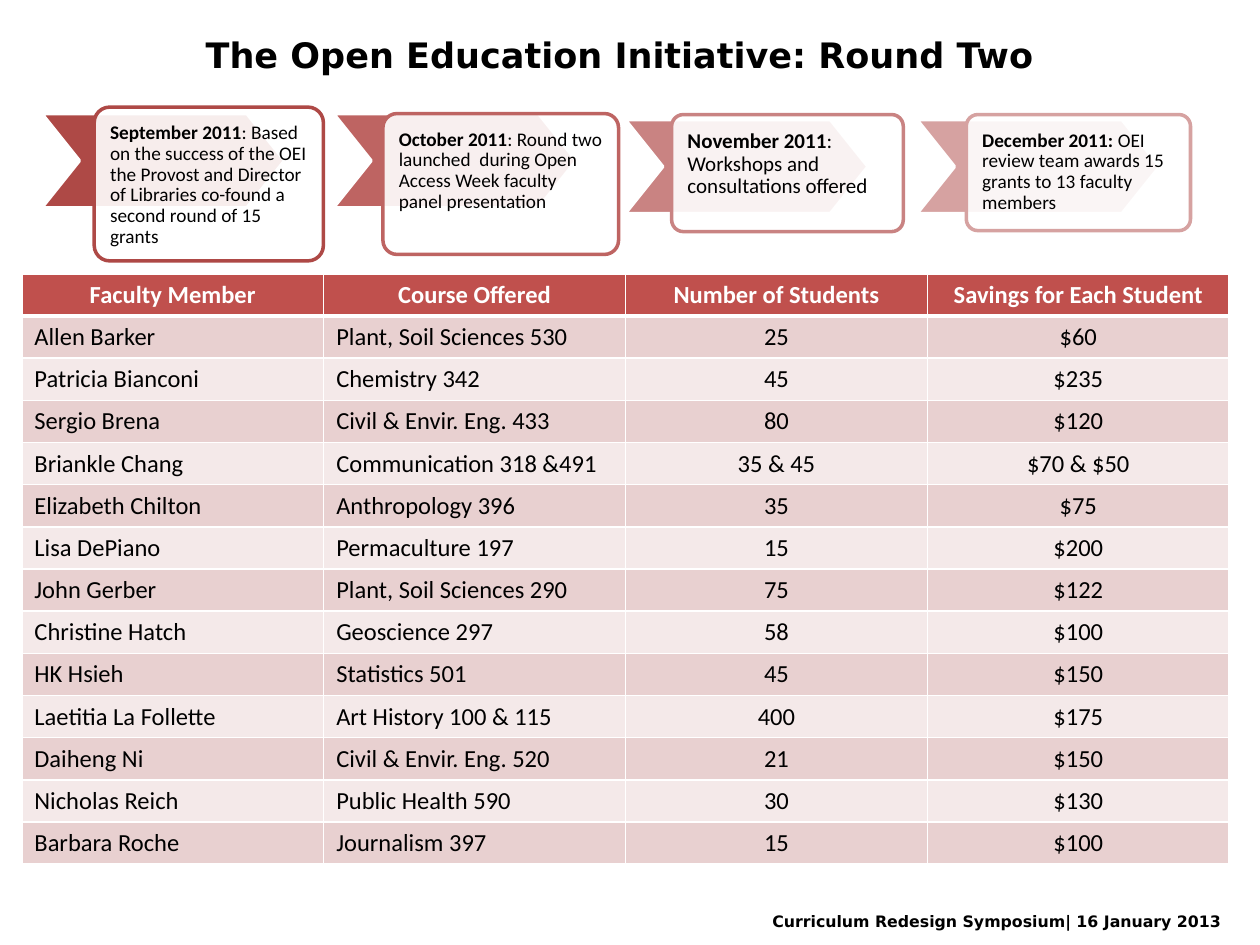
import lxml.etree
import pptx
import pptx.dml.color
import pptx.enum.shapes
import pptx.enum.text
import pptx.oxml
import pptx.oxml.ns
import pptx.util

Cm = pptx.util.Cm
Pt = pptx.util.Pt
RGBColor = pptx.dml.color.RGBColor
MSO_SHAPE = pptx.enum.shapes.MSO_SHAPE
PP_ALIGN = pptx.enum.text.PP_ALIGN
MSO_ANCHOR = pptx.enum.text.MSO_ANCHOR
qn = pptx.oxml.ns.qn

WHITE = RGBColor(0xFF, 0xFF, 0xFF)
BLACK = RGBColor(0, 0, 0)
HEADER_RED = RGBColor(0xC0, 0x50, 0x4D)
BAND_DARK = RGBColor(0xE8, 0xD0, 0xD0)
BAND_LIGHT = RGBColor(0xF4, 0xE9, 0xE9)
SEPTEMBER_RED = RGBColor(0xAE, 0x49, 0x46)
OCTOBER_RED = RGBColor(0xBE, 0x64, 0x62)
NOVEMBER_RED = RGBColor(0xC9, 0x83, 0x82)
DECEMBER_RED = RGBColor(0xD6, 0xA2, 0xA1)


def add_text(shapes, left, top, width, height, runs, font_name, size):
    text_box = shapes.add_textbox(Cm(left), Cm(top), Cm(width), Cm(height))
    text_box.text_frame.word_wrap = True
    paragraph = text_box.text_frame.paragraphs[0]
    paragraph.font.name = font_name
    paragraph.font.size = Pt(size)
    paragraph.font.color.rgb = BLACK
    for text, bold in runs:
        run = paragraph.add_run()
        run.text = text
        run.font.bold = bold
    return text_box.text_frame


def add_block(shapes, preset, bounds, adjustment, fill_color, line_color):
    shape = shapes.add_shape(preset, *[Cm(length) for length in bounds])
    shape.shadow.inherit = False
    shape.adjustments[0] = adjustment
    shape.fill.solid()
    shape.fill.fore_color.rgb = fill_color
    shape.line.color.rgb = line_color
    shape.line.width = Pt(2)
    return shape


presentation = pptx.Presentation()
presentation.slide_width = Cm(25.4)
presentation.slide_height = Cm(19.05)
slide = presentation.slides.add_slide(presentation.slide_layouts[6])

add_text(slide.shapes, 15.32, 18.26, 10.08, 0.64,
         [("Curriculum Redesign Symposium| 16 January 2013", True)], "DejaVu Sans", 9)
title = add_text(slide.shapes, 0.43, -0.84, 24.13, 3.89,
                 [("The Open Education Initiative: Round Two", True)], "DejaVu Sans", 20)
title.vertical_anchor = MSO_ANCHOR.MIDDLE
title.paragraphs[0].alignment = PP_ALIGN.CENTER

milestones = [
    (SEPTEMBER_RED, 2.29, (1.9, 2.16, 4.62, 3.1), 11, "September 2011",
     ": Based on the success of the OEI the Provost and Director of Libraries "
     "co-found a second round of 15 grants"),
    (OCTOBER_RED, 2.29, (7.72, 2.29, 4.75, 2.84), 11, "October 2011",
     ": Round two launched  during Open Access Week faculty panel presentation"),
    (NOVEMBER_RED, 2.41, (13.54, 2.31, 4.67, 2.36), 12, "November 2011",
     ": Workshops and consultations offered"),
    (DECEMBER_RED, 2.41, (19.48, 2.31, 4.52, 2.34), 11, "December 2011: ",
     "OEI review team awards 15 grants to 13 faculty members"),
]
TEXT_INSET = 0.09
timeline = slide.shapes.add_group_shape().shapes
for index, (color, chevron_top, card_bounds, size, month, event) in enumerate(milestones):
    chevron_bounds = (0.84 + 5.88 * index, chevron_top, 4.9, 1.9)
    add_block(timeline, MSO_SHAPE.CHEVRON, chevron_bounds, 0.4, color, WHITE)
    card = add_block(timeline, MSO_SHAPE.ROUNDED_RECTANGLE, card_bounds, 0.1, WHITE, color)
    card_color = card.fill._xPr.find(qn("a:solidFill"))[0]
    lxml.etree.SubElement(card_color, qn("a:alpha"), val="90000")

    left, top, width, height = card_bounds
    frame = add_text(timeline, left + TEXT_INSET, top + TEXT_INSET,
                     width - 2 * TEXT_INSET, height - 2 * TEXT_INSET,
                     [(month, True), (event, False)], "Calibri", size)
    frame.margin_left = frame.margin_right = Cm(0.23)
    frame.margin_top = frame.margin_bottom = Cm(0.23)
    frame.paragraphs[0].line_spacing = 0.9

rows = [
    ("Faculty Member", "Course Offered", "Number of Students", "Savings for Each Student"),
    ("Allen Barker", "Plant, Soil Sciences 530", "25", "$60"),
    ("Patricia Bianconi", "Chemistry 342", "45", "$235"),
    ("Sergio Brena", "Civil & Envir. Eng. 433", "80", "$120"),
    ("Briankle Chang", "Communication 318 &491", "35 & 45", "$70 & $50"),
    ("Elizabeth Chilton", "Anthropology 396", "35", "$75"),
    ("Lisa DePiano", "Permaculture 197", "15", "$200"),
    ("John Gerber", "Plant, Soil Sciences 290", "75", "$122"),
    ("Christine Hatch", "Geoscience 297", "58", "$100"),
    ("HK Hsieh", "Statistics 501", "45", "$150"),
    ("Laetitia La Follette", "Art History 100 & 115", "400", "$175"),
    ("Daiheng Ni", "Civil & Envir. Eng. 520", "21", "$150"),
    ("Nicholas Reich", "Public Health 590", "30", "$130"),
    ("Barbara Roche", "Journalism 397", "15", "$100"),
]
ROW_HEIGHT = 0.85
table = slide.shapes.add_table(len(rows), 4, Cm(0.44), Cm(5.52), Cm(24.34),
                               Cm(ROW_HEIGHT * len(rows))).table
for row_index, values in enumerate(rows):
    is_header = row_index == 0
    table.rows[row_index].height = Cm(ROW_HEIGHT)
    for column_index, value in enumerate(values):
        cell = table.cell(row_index, column_index)
        cell_properties = cell._tc.get_or_add_tcPr()
        for side in ("lnL", "lnR", "lnT", "lnB"):
            width = Pt(3) if is_header and side == "lnB" else Pt(1)
            border = lxml.etree.SubElement(cell_properties, qn(f"a:{side}"), w=str(width))
            border_fill = lxml.etree.SubElement(border, qn("a:solidFill"))
            lxml.etree.SubElement(border_fill, qn("a:srgbClr"), val=str(WHITE))
        cell.fill.solid()
        band = BAND_DARK if row_index % 2 else BAND_LIGHT
        cell.fill.fore_color.rgb = HEADER_RED if is_header else band
        cell.text = value
        paragraph = cell.text_frame.paragraphs[0]
        centered = is_header or column_index >= 2
        paragraph.alignment = PP_ALIGN.CENTER if centered else PP_ALIGN.LEFT
        paragraph.font.name = "Calibri"
        paragraph.font.size = Pt(14)
        paragraph.font.bold = is_header
        paragraph.font.color.rgb = WHITE if is_header else BLACK

presentation.save("out.pptx")
